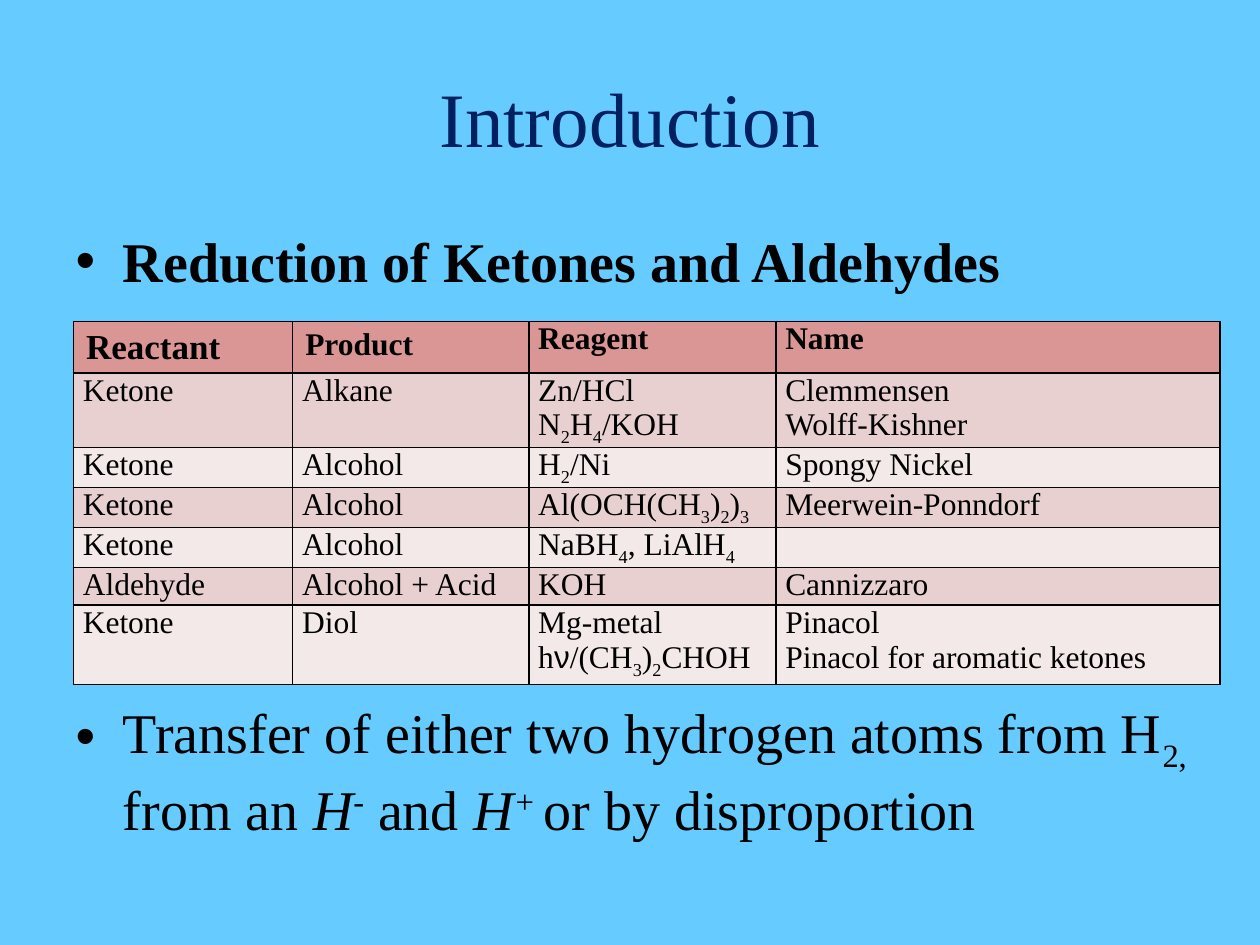
import itertools

import lxml.etree
import pptx
import pptx.dml.color
import pptx.enum.text
import pptx.oxml.ns
import pptx.util

Cm = pptx.util.Cm
Pt = pptx.util.Pt
SUB, SUPER = -25, 30


def add_span(para, text, size=18, color="000000", font="Times New Roman",
             bold=False, italic=False, baseline=0):
    span = para.add_run()
    span.text = text
    span.font.name = font
    span.font.size = Pt(size)
    span.font.bold = bold
    span.font.italic = italic
    span.font.color.rgb = pptx.dml.color.RGBColor.from_string(color)
    if baseline:
        span.font._element.set("baseline", str(baseline * 1000))


def add_borders(cell, color="000000", width=1):
    """Line all four sides; must run before the cell is filled."""
    properties = cell._tc.get_or_add_tcPr()
    for side in ("a:lnL", "a:lnR", "a:lnT", "a:lnB"):
        line = lxml.etree.SubElement(properties, pptx.oxml.ns.qn(side), w=str(Pt(width)))
        fill = lxml.etree.SubElement(line, pptx.oxml.ns.qn("a:solidFill"))
        lxml.etree.SubElement(fill, pptx.oxml.ns.qn("a:srgbClr"), val=color)


deck = pptx.Presentation()
deck.slide_width, deck.slide_height = Cm(25.4), Cm(19.05)
page = deck.slides.add_slide(deck.slide_layouts[1])
page.background.fill.solid()
page.background.fill.fore_color.rgb = pptx.dml.color.RGBColor.from_string("66CCFF")

# Title
title = page.shapes.title
title.left, title.top, title.width, title.height = Cm(1.27), Cm(0.76), Cm(22.86), Cm(3.18)
add_span(title.text_frame.paragraphs[0], "Introduction", size=44, color="002060")

# Bullets, the second one spaced to clear the table
body = page.placeholders[1]
body.left, body.top, body.width, body.height = Cm(1.27), Cm(4.43), Cm(23.29), Cm(13.34)
body.text_frame.auto_size = pptx.enum.text.MSO_AUTO_SIZE.NONE
para = body.text_frame.paragraphs[0]
add_span(para, "Reduction of Ketones and Aldehydes", size=32, bold=True)

para = body.text_frame.add_paragraph()
para.space_before = Pt(231)
for text, style in [
    ("Transfer of either two hydrogen atoms from H", {}),
    ("2,", {"baseline": SUB}),
    (" from an ", {}),
    ("H", {"italic": True}),
    ("-", {"italic": True, "baseline": SUPER}),
    (" and ", {}),
    ("H", {"italic": True}),
    ("+ ", {"italic": True, "baseline": SUPER}),
    ("or by disproportion", {}),
]:
    add_span(para, text, size=32, **style)

# Table of reductions; digits in formulas are subscripts
rows = [
    ("Reactant", "Product", "Reagent", "Name"),
    ("Ketone", "Alkane", "Zn/HCl\nN2H4/KOH", "Clemmensen\nWolff-Kishner"),
    ("Ketone", "Alcohol", "H2/Ni", "Spongy Nickel"),
    ("Ketone", "Alcohol", "Al(OCH(CH3)2)3", "Meerwein-Ponndorf"),
    ("Ketone", "Alcohol", "NaBH4, LiAlH4", ""),
    ("Aldehyde", "Alcohol + Acid", "KOH", "Cannizzaro"),
    ("Ketone", "Diol", "Mg-metal\nhν/(CH3)2CHOH", "Pinacol\nPinacol for aromatic ketones"),
]
column_widths = [4.42, 4.76, 4.98, 8.95]
row_heights = [1.03, 1.5, 0.76, 0.76, 0.76, 0.76, 1.6]

table = page.shapes.add_table(len(rows), len(column_widths), Cm(1.48), Cm(6.48),
                              Cm(sum(column_widths)), Cm(sum(row_heights))).table
for column, width in zip(table.columns, column_widths):
    column.width = Cm(width)
for row, height in zip(table.rows, row_heights):
    row.height = Cm(height)

for r, texts in enumerate(rows):
    header = r == 0
    fill = "D99694" if header else ("F4E9E9", "E8D0D0")[r % 2]
    for c, text in enumerate(texts):
        cell = table.cell(r, c)
        add_borders(cell)
        cell.fill.solid()
        cell.fill.fore_color.rgb = pptx.dml.color.RGBColor.from_string(fill)
        if not (header and c < 2):
            cell.margin_left = cell.margin_right = Cm(0.19)
            cell.margin_top = cell.margin_bottom = 0
        size = 20 if header and c == 0 else 18
        for i, line in enumerate(text.split("\n")):
            para = cell.text_frame.add_paragraph() if i else cell.text_frame.paragraphs[0]
            for (digit, greek), part in itertools.groupby(
                    line, key=lambda letter: (letter.isdigit(), letter == "ν")):
                add_span(para, "".join(part), size=size, bold=header,
                         font="Arial" if greek else "Times New Roman",
                         baseline=SUB if digit else 0)

deck.save("out.pptx")
